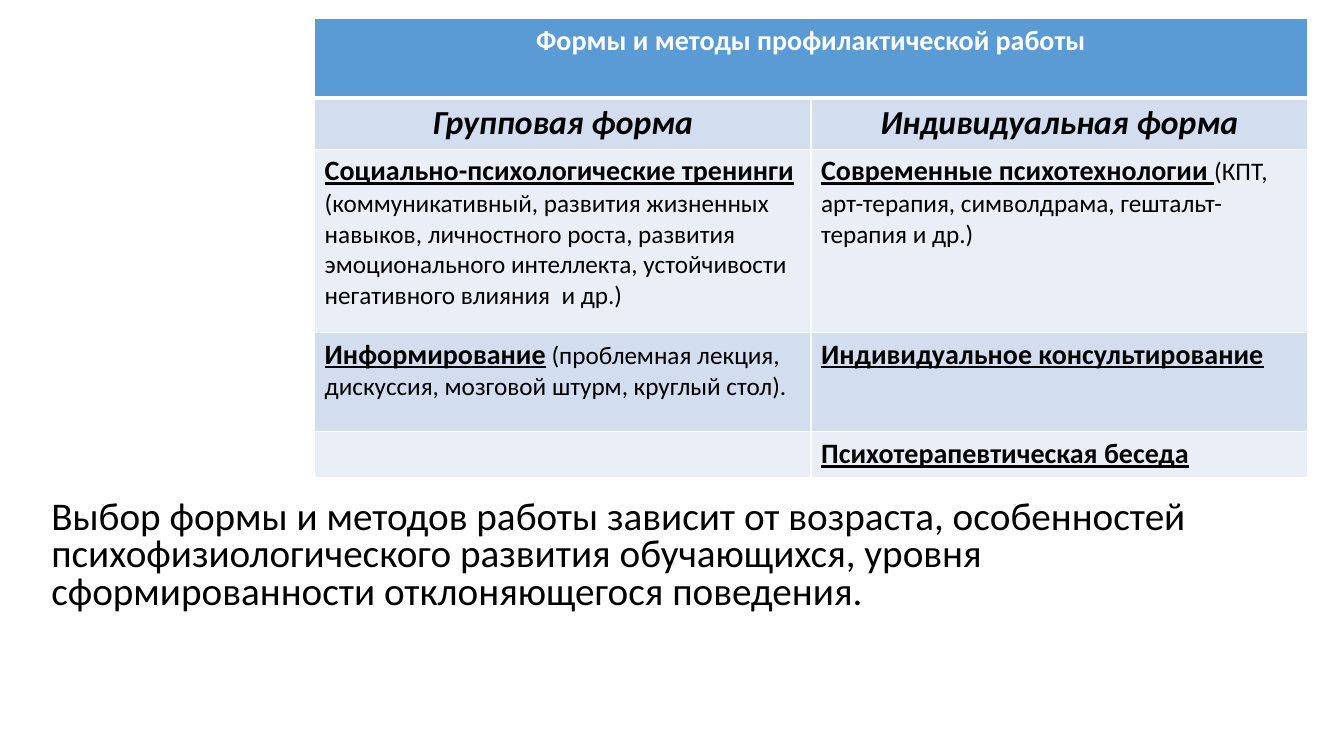
from lxml import etree
from pptx import Presentation
from pptx import util as u
from pptx.dml.color import RGBColor
from pptx.enum import text
from pptx.oxml import ns

BLACK = RGBColor(0x00, 0x00, 0x00)
WHITE = RGBColor(0xFF, 0xFF, 0xFF)
HEADER = RGBColor(0x5B, 0x9B, 0xD5)
BAND_DARK = RGBColor(0xD2, 0xDE, 0xEF)
BAND_LIGHT = RGBColor(0xEA, 0xEF, 0xF7)
ROW_FILLS = [HEADER, BAND_DARK, BAND_LIGHT, BAND_DARK, BAND_LIGHT]
ROW_HEIGHTS = [2.01, 1.17, 4.62, 2.5, 1.17]
COLUMN_WIDTH = 12.51

BASE = {"name": "Calibri", "bold": False, "italic": False, "underline": False}
HEADING = {**BASE, "size": u.Pt(20), "bold": True, "color": WHITE}
FORM = {**BASE, "size": u.Pt(24), "bold": True, "italic": True, "color": BLACK}
METHOD = {**BASE, "size": u.Pt(20), "bold": True, "underline": True, "color": BLACK}
DETAIL = {**BASE, "size": u.Pt(18), "color": BLACK}
SUMMARY = {**BASE, "size": u.Pt(28), "color": BLACK}

ROWS = [
    [[("Формы и методы профилактической работы", HEADING)], []],
    [[("Групповая форма", FORM)], [("Индивидуальная форма", FORM)]],
    [
        [
            ("Социально-психологические тренинги ", METHOD),
            ("(коммуникативный, развития жизненных навыков, личностного роста, "
             "развития эмоционального интеллекта, устойчивости негативного "
             "влияния  и др.)", DETAIL),
        ],
        [
            ("Современные психотехнологии ", METHOD),
            ("(КПТ, арт-терапия, символдрама, гештальт-терапия и др.)", DETAIL),
        ],
    ],
    [
        [
            ("Информирование", METHOD),
            (" (проблемная лекция, дискуссия, мозговой штурм, круглый стол).", DETAIL),
        ],
        [("Индивидуальное консультирование", METHOD)],
    ],
    [[], [("Психотерапевтическая беседа", METHOD)]],
]
CONCLUSION = (
    "Выбор формы и методов работы зависит от возраста, особенностей "
    "психофизиологического развития обучающихся, уровня сформированности "
    "отклоняющегося поведения."
)


def add_span(para, words, style):
    """Add a run of text with the given format values."""
    span = para.add_run()
    span.text = words
    for key, value in style.items():
        if key == "color":
            span.font.color.rgb = value
        else:
            setattr(span.font, key, value)


def add_border(cell, side, points):
    """Draw one white border line of a table cell."""
    line = etree.SubElement(cell._tc.get_or_add_tcPr(), ns.qn(f"a:ln{side}"), w=str(u.Pt(points)))
    fill = etree.SubElement(line, ns.qn("a:solidFill"))
    etree.SubElement(fill, ns.qn("a:srgbClr"), val=str(WHITE))


def fill_cell(cell, spans, row):
    """Give a cell its borders, background and text."""
    widths = {"L": 1, "R": 1, "T": 3 if row == 1 else 1, "B": 3 if row == 0 else 1}
    for side, points in widths.items():
        add_border(cell, side, points)
    cell.fill.solid()
    cell.fill.fore_color.rgb = ROW_FILLS[row]
    para = cell.text_frame.paragraphs[0]
    if row < 2:
        para.alignment = text.PP_ALIGN.CENTER
    for words, style in spans:
        add_span(para, words, style)


def add_methods_table(page):
    """Add the table of group and individual methods."""
    frame = page.shapes.add_table(
        len(ROWS), 2, u.Cm(7.93), u.Cm(0.46), u.Cm(2 * COLUMN_WIDTH), u.Cm(sum(ROW_HEIGHTS))
    )
    table = frame.table
    for column in table.columns:
        column.width = u.Cm(COLUMN_WIDTH)
    for row, height in enumerate(ROW_HEIGHTS):
        table.rows[row].height = u.Cm(height)
        for column, spans in enumerate(ROWS[row]):
            fill_cell(table.cell(row, column), spans, row)
    table.cell(0, 0).merge(table.cell(0, 1))


def place_conclusion(box):
    """Move the body placeholder and write the conclusion in it."""
    place = {"left": 1.04, "top": 12.47, "width": 31.42, "height": 3.28}
    for key, value in place.items():
        setattr(box, key, u.Cm(value))
    frame = box.text_frame
    frame.word_wrap = True
    frame.auto_size = text.MSO_AUTO_SIZE.NONE
    frame.vertical_anchor = text.MSO_ANCHOR.TOP
    para = frame.paragraphs[0]
    properties = para._p.get_or_add_pPr()
    properties.set("marL", "0")
    properties.set("indent", "0")
    etree.SubElement(properties, ns.qn("a:buNone"))
    layout = {"alignment": text.PP_ALIGN.LEFT, "line_spacing": 0.8, "space_before": u.Pt(0)}
    for key, value in layout.items():
        setattr(para, key, value)
    add_span(para, CONCLUSION, SUMMARY)


def main():
    """Build the slide and save it."""
    deck = Presentation()
    deck.slide_width = u.Cm(33.87)
    deck.slide_height = u.Cm(19.05)
    page = deck.slides.add_slide(deck.slide_layouts[1])
    title = page.shapes.title
    title.element.getparent().remove(title.element)
    place_conclusion(page.placeholders[1])
    add_methods_table(page)
    deck.save("out.pptx")


if __name__ == "__main__":
    main()
